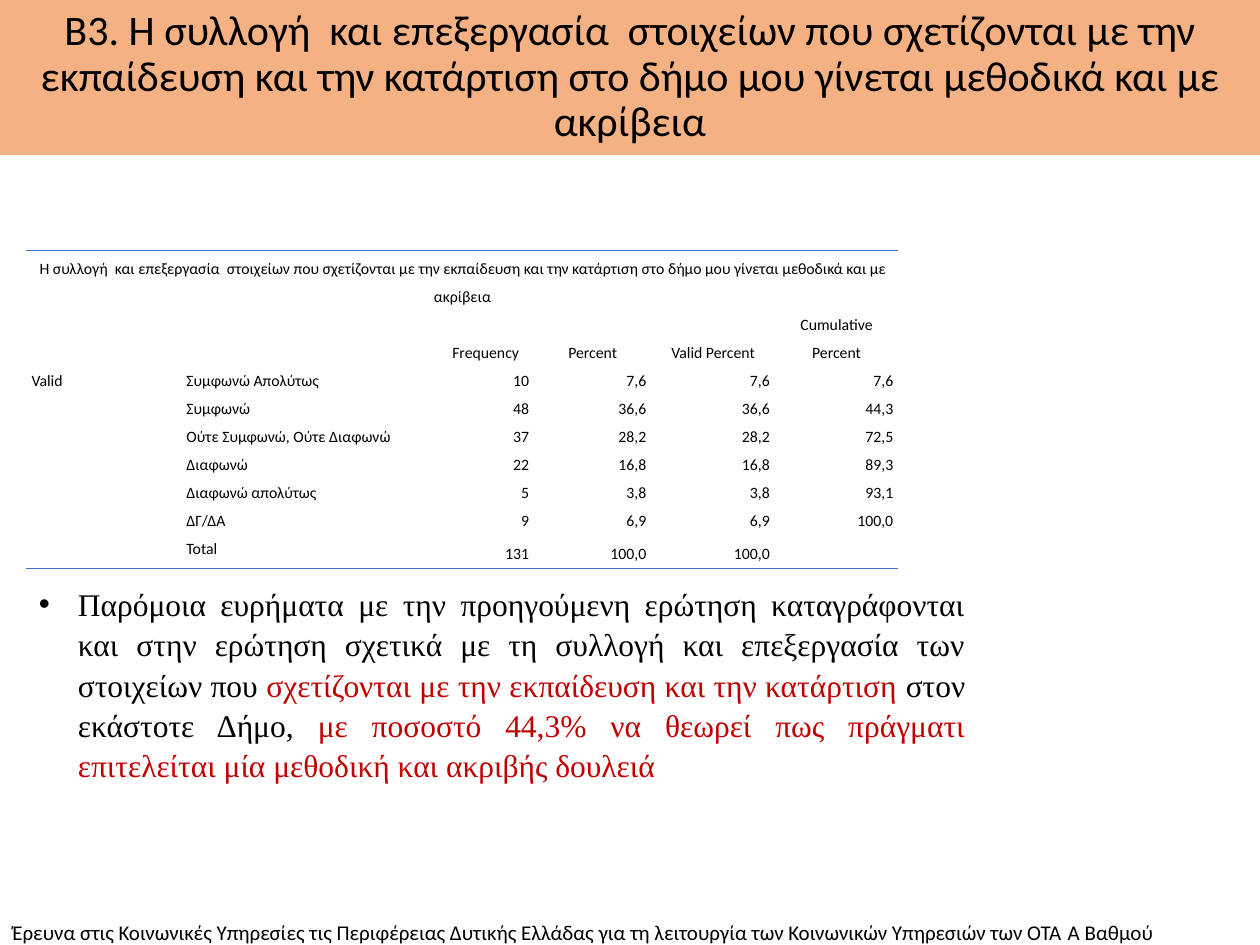
from lxml import etree
from pptx import Presentation
from pptx import util as u
from pptx.dml.color import RGBColor
from pptx.enum import shapes, text
from pptx.oxml import ns

LEFT, CENTER, RIGHT, JUSTIFY = (text.PP_ALIGN.LEFT, text.PP_ALIGN.CENTER,
                                text.PP_ALIGN.RIGHT, text.PP_ALIGN.JUSTIFY)
TOP, MIDDLE, BOTTOM = (text.MSO_ANCHOR.TOP, text.MSO_ANCHOR.MIDDLE,
                       text.MSO_ANCHOR.BOTTOM)
BLACK, RED, PEACH, BLUE = "000000", "C00000", "F4B183", "4472C4"
LINE = u.Pt(16)  # height of one text line in the table

presentation = Presentation()
presentation.slide_width, presentation.slide_height = u.Inches(10), u.Inches(7.5)
slide = presentation.slides.add_slide(presentation.slide_layouts[6])
width, height = presentation.slide_width, presentation.slide_height


def write(frame, runs, size, font="Calibri", align=LEFT, anchor=TOP,
          spacing=None, after=0, indent=None, bullet=None):
    """Fill a text frame with one paragraph; runs is a list of (text, colour)."""
    frame.word_wrap = True
    frame.vertical_anchor = anchor
    paragraph = frame.paragraphs[0]
    paragraph.alignment = align
    paragraph.space_after = u.Pt(after)
    if spacing:
        paragraph.line_spacing = spacing
    properties = paragraph._p.get_or_add_pPr()
    for name, value in (indent or {}).items():
        properties.set(name, str(u.Inches(value)))
    if bullet:
        etree.SubElement(properties, ns.qn("a:buFont"), typeface="Arial")
        etree.SubElement(properties, ns.qn("a:buChar"), char=bullet)
    for words, color in runs:
        run = paragraph.add_run()
        run.text = words
        run.font.size = u.Pt(size)
        run.font.name = font
        run.font.color.rgb = RGBColor.from_string(color)


def add_border(cell, side):
    line = etree.SubElement(cell._tc.get_or_add_tcPr(), ns.qn(f"a:ln{side}"),
                            w=str(u.Pt(1)))
    fill = etree.SubElement(line, ns.qn("a:solidFill"))
    etree.SubElement(fill, ns.qn("a:srgbClr"), val=BLUE)


# Title band
title = slide.shapes.add_shape(shapes.MSO_SHAPE.RECTANGLE, 0, 0,
                               width, int(height * 0.164))
title.shadow.inherit = False
title.fill.solid()
title.fill.fore_color.rgb = RGBColor.from_string(PEACH)
title.line.fill.background()
write(title.text_frame,
      [("Β3. Η συλλογή  και επεξεργασία  στοιχείων που σχετίζονται με την "
        "εκπαίδευση και την κατάρτιση στο δήμο μου γίνεται μεθοδικά και με "
        "ακρίβεια", BLACK)],
      24, align=CENTER, anchor=MIDDLE, spacing=0.9)

# Footer
footer = slide.shapes.add_textbox(0, int(height * 0.967),
                                  int(width * 0.983), int(height * 0.04))
write(footer.text_frame,
      [("Έρευνα στις Κοινωνικές Υπηρεσίες τις Περιφέρειας Δυτικής Ελλάδας για "
        "τη λειτουργία των Κοινωνικών Υπηρεσιών των ΟΤΑ Ά Βαθμού", BLACK)], 12)

# Finding
finding = slide.shapes.add_textbox(int(width * 0.021), int(height * 0.609),
                                   int(width * 0.755), int(height * 0.228))
write(finding.text_frame,
      [("Παρόμοια ευρήματα με την προηγούμενη ερώτηση καταγράφονται και στην "
        "ερώτηση σχετικά με τη συλλογή και επεξεργασία των στοιχείων που ", BLACK),
       ("σχετίζονται με την εκπαίδευση και την κατάρτιση ", RED),
       ("στον εκάστοτε Δήμο, ", BLACK),
       ("με ποσοστό 44,3% να θεωρεί πως πράγματι επιτελείται μία μεθοδική και "
        "ακριβής δουλειά", RED)],
      18, font="Times New Roman", align=JUSTIFY, anchor=MIDDLE, spacing=1.07,
      after=8, indent={"marL": 0.31, "indent": -0.31}, bullet="•")

# Frequency table
rows = [
    ["Η συλλογή  και επεξεργασία  στοιχείων που σχετίζονται με την εκπαίδευση "
     "και την κατάρτιση στο δήμο μου γίνεται μεθοδικά και με ακρίβεια",
     "", "", "", "", ""],
    ["", "", "Frequency", "Percent", "Valid Percent", "Cumulative Percent"],
    ["Valid", "Συμφωνώ Απολύτως", "10", "7,6", "7,6", "7,6"],
    ["", "Συμφωνώ", "48", "36,6", "36,6", "44,3"],
    ["", "Ούτε Συμφωνώ, Ούτε Διαφωνώ", "37", "28,2", "28,2", "72,5"],
    ["", "Διαφωνώ", "22", "16,8", "16,8", "89,3"],
    ["", "Διαφωνώ απολύτως", "5", "3,8", "3,8", "93,1"],
    ["", "ΔΓ/ΔΑ", "9", "6,9", "6,9", "100,0"],
    ["", "Total", "131", "100,0", "100,0", ""],
]
column_widths = [1.23, 2.03, 0.77, 0.93, 0.98, 0.98]
last = len(rows) - 1
frame = slide.shapes.add_table(len(rows), len(column_widths),
                               int(width * 0.021), int(height * 0.265),
                               u.Inches(sum(column_widths)), LINE * 11)
table = frame.table
table.first_row = table.horz_banding = False
style = table._tbl.tblPr.find(ns.qn("a:tableStyleId"))
style.text = "{2D5ABB26-0587-4C30-8999-92F81FD0307C}"  # no style, no grid
for column, inches in zip(table.columns, column_widths):
    column.width = u.Inches(inches)

for r, row in enumerate(rows):
    table.rows[r].height = LINE * (2 if r < 2 else 1)
    for c, words in enumerate(row):
        cell = table.cell(r, c)
        cell.margin_left = cell.margin_right = 0
        cell.margin_top = cell.margin_bottom = 0
        if r < 2:
            align, anchor = CENTER, (MIDDLE, BOTTOM)[r]
        else:
            align, anchor = (LEFT, TOP) if c < 2 else (RIGHT, MIDDLE)
        write(cell.text_frame, [(words, BLACK)] if words else [], 9,
              align=align, spacing=LINE, after=8,
              indent={"marL": 0.04, "marR": 0.04, "indent": 0})
        cell.vertical_anchor = anchor
        if r == 0:
            add_border(cell, "T")
        if r == last or (r, c) == (2, 0):
            add_border(cell, "B")
        cell.fill.background()

table.cell(0, 0).merge(table.cell(0, 5))
table.cell(1, 0).merge(table.cell(1, 1))
table.cell(2, 0).merge(table.cell(last, 0))

presentation.save("out.pptx")
